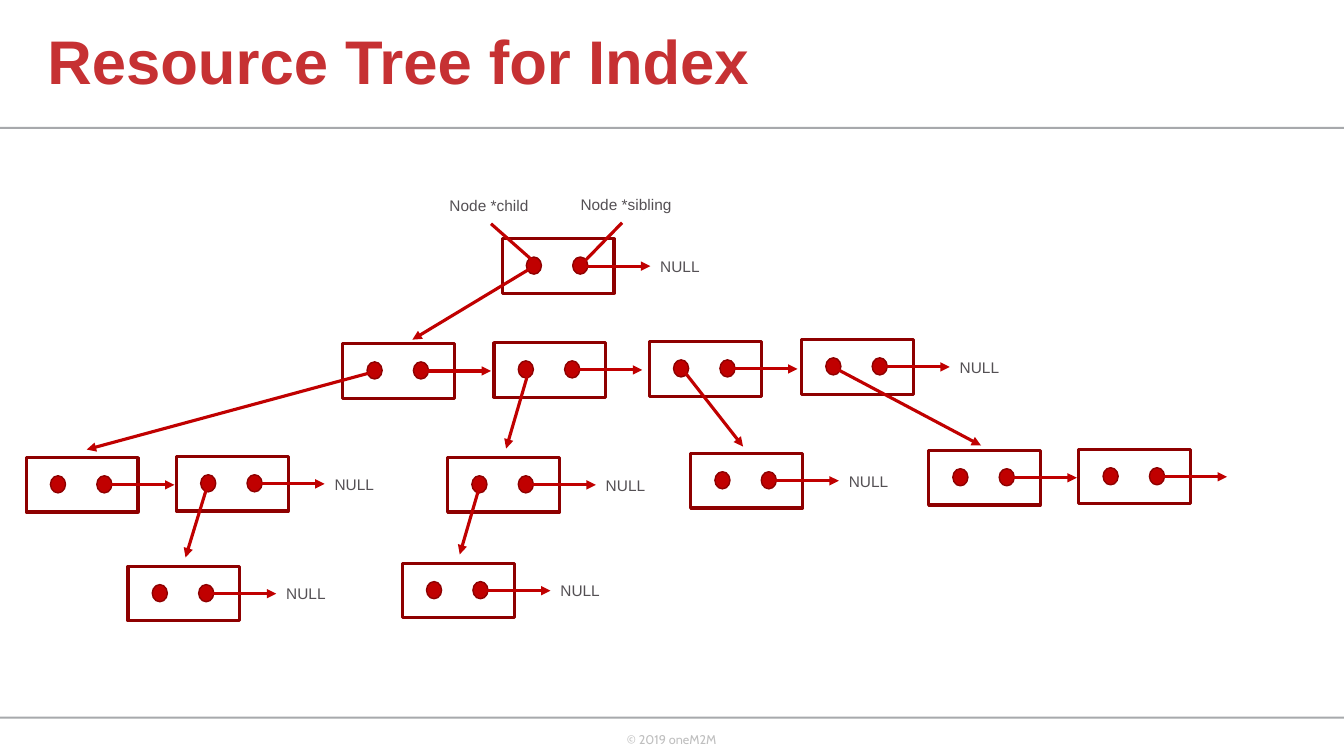
import pptx
import pptx.util
import pptx.dml.color
import pptx.enum.shapes
import pptx.enum.text
import pptx.oxml
import pptx.oxml.ns

Inches = pptx.util.Inches
Pt = pptx.util.Pt
SHAPE = pptx.enum.shapes.MSO_SHAPE

COLORS = {
    "title": "C63133",
    "rule": "A7A9AC",
    "footer": "BFBFBF",
    "label": "545054",
    "frame": "8E0000",
    "pointer": "C00000",
}

NODES = [
    (4.98, 2.37, "NULL"),
    (3.4, 3.41, ""),
    (4.9, 3.4, ""),
    (6.44, 3.39, ""),
    (7.95, 3.37, "NULL"),
    (0.26, 4.54, ""),
    (1.75, 4.53, "NULL"),
    (4.44, 4.54, "NULL"),
    (6.85, 4.5, "NULL"),
    (9.21, 4.47, ""),
    (10.7, 4.46, ""),
    (1.27, 5.62, "NULL"),
    (3.99, 5.59, "NULL"),
]

CHILD_LINKS = [
    ((5.3, 2.64), (4.09, 3.37)),
    ((3.74, 3.68), (0.86, 4.46)),
    ((5.23, 3.73), (5.02, 4.45)),
    ((6.79, 3.69), (7.37, 4.43)),
    ((8.26, 3.64), (9.73, 4.42)),
    ((2.06, 4.81), (1.84, 5.53)),
    ((4.77, 4.78), (4.56, 5.5)),
]


def color(name):
    return pptx.dml.color.RGBColor.from_string(COLORS[name])


def set_font(paragraph, name, size, color_name, bold=False):
    paragraph.font.name = name
    paragraph.font.size = Pt(size)
    paragraph.font.bold = bold
    paragraph.font.color.rgb = color(color_name)


def add_shape(page, kind, left, top, width, height, fill=None, line=None, weight=1):
    shape = page.shapes.add_shape(
        kind, Inches(left), Inches(top), Inches(width), Inches(height))
    shape.shadow.inherit = False
    if fill:
        shape.fill.solid()
        shape.fill.fore_color.rgb = color(fill)
    else:
        shape.fill.background()
    if line:
        shape.line.color.rgb = color(line)
        shape.line.width = Pt(weight)
    else:
        shape.line.fill.background()


def add_line(page, start, end, arrow=True):
    line = page.shapes.add_connector(
        pptx.enum.shapes.MSO_CONNECTOR.STRAIGHT,
        Inches(start[0]), Inches(start[1]), Inches(end[0]), Inches(end[1]))
    line.line.color.rgb = color("pointer")
    line.line.width = Pt(2.25)
    if arrow:
        tail = pptx.oxml.parse_xml(
            f'<a:tailEnd {pptx.oxml.ns.nsdecls("a")} type="triangle"/>')
        line.line._get_or_add_ln().append(tail)
    line._element.spPr.append(
        pptx.oxml.parse_xml(f'<a:effectLst {pptx.oxml.ns.nsdecls("a")}/>'))


def add_text(page, text, left, top, width=3, height=0.29, font="Arial",
             size=11, color_name="label", wrap=True):
    box = page.shapes.add_textbox(
        Inches(left), Inches(top), Inches(width), Inches(height))
    box.text_frame.word_wrap = wrap
    paragraph = box.text_frame.paragraphs[0]
    paragraph.text = text
    set_font(paragraph, font, size, color_name)


def add_title(page, text):
    title = page.shapes.title
    title.left, title.top = Inches(0.37), Inches(0)
    title.width, title.height = Inches(8.59), Inches(1.28)
    title.text_frame.text = text
    title.text_frame.vertical_anchor = pptx.enum.text.MSO_ANCHOR.MIDDLE
    paragraph = title.text_frame.paragraphs[0]
    paragraph.alignment = pptx.enum.text.PP_ALIGN.LEFT
    paragraph.line_spacing = 0.9
    set_font(paragraph, "Arial", 44, "title", bold=True)


def add_node(page, left, top, label):
    add_shape(page, SHAPE.RECTANGLE, left, top, 1.11, 0.54, line="frame", weight=2.25)
    for offset in (0.24, 0.7):
        add_shape(page, SHAPE.OVAL, left + offset, top + 0.18, 0.15, 0.17,
                  fill="pointer", line="frame")
    add_line(page, (left + 0.77, top + 0.27), (left + 1.47, top + 0.27))
    if label:
        add_text(page, label, left + 1.47, top + 0.13)


def main():
    deck = pptx.Presentation()
    deck.slide_width, deck.slide_height = Inches(13.33), Inches(7.5)
    page = deck.slides.add_slide(deck.slide_layouts[5])
    add_title(page, "Resource Tree for Index")
    for top in (1.26, 7.11):
        add_shape(page, SHAPE.RECTANGLE, 0, top, 13.33, 0.02, fill="rule")
    add_text(page, "© 2019 oneM2M", 6.12, 7.21, 1.1, 0.4,
             font="Cabin", size=9, color_name="footer", wrap=False)

    for left, top, label in NODES:
        add_node(page, left, top, label)
    for start, end in CHILD_LINKS:
        add_line(page, start, end)

    add_line(page, (4.87, 2.22), (5.3, 2.6), arrow=False)
    add_text(page, "Node *child", 4.36, 1.9)
    add_line(page, (6.17, 2.21), (5.78, 2.61), arrow=False)
    add_text(page, "Node *sibling", 5.66, 1.89)
    deck.save("out.pptx")


if __name__ == "__main__":
    main()
